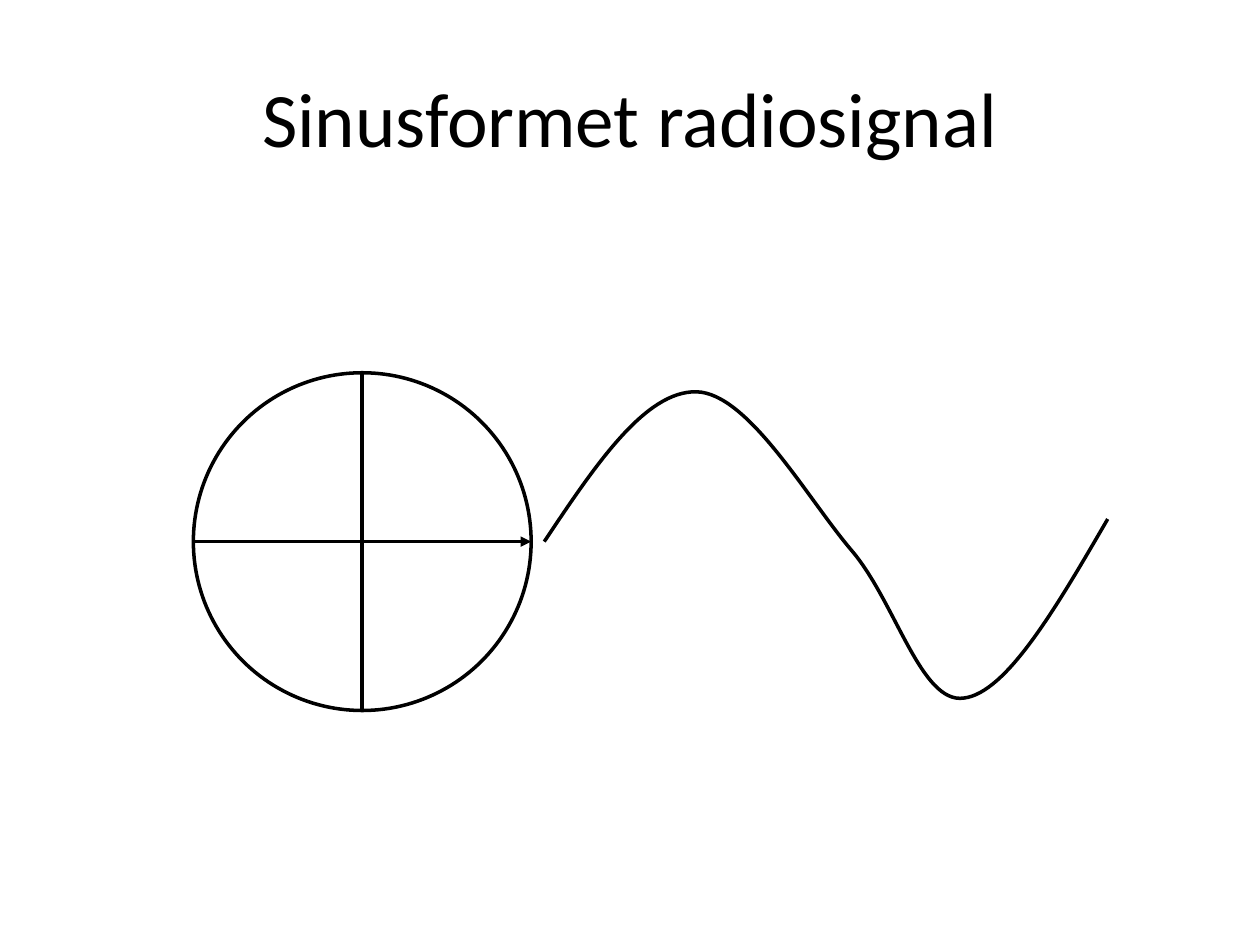
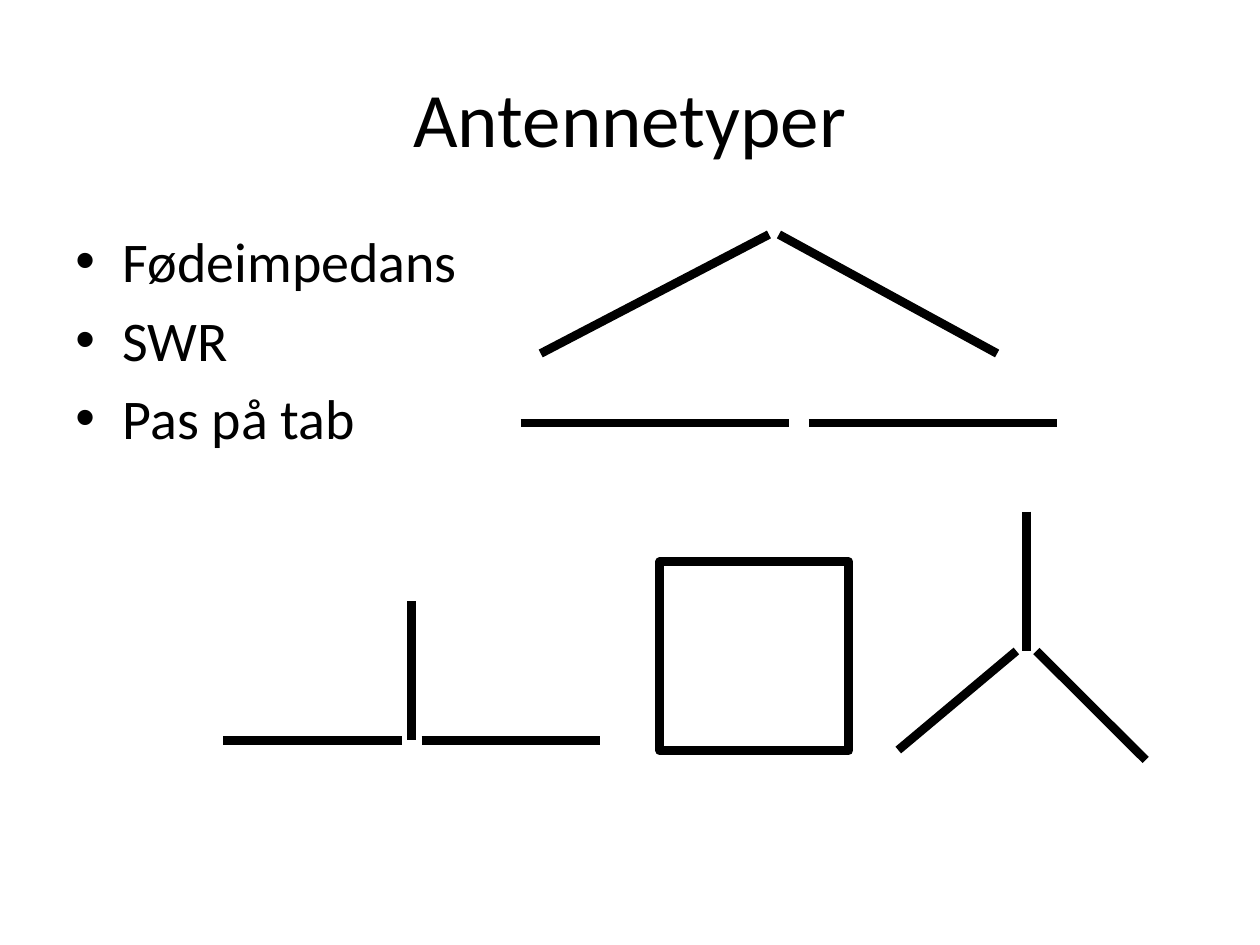
from lxml import etree
from pptx import Presentation
from pptx.dml.color import RGBColor
from pptx.enum import shapes, text
from pptx.oxml import ns
from pptx.util import Pt


def color(value):
    return RGBColor.from_string(value)


def add_xml(parent, tag, **attrs):
    return etree.SubElement(parent, ns.qn(tag), attrs)


class Deck:
    FONT = "Calibri"
    INK = "000000"
    TITLE_SIZE = 44
    BODY_SIZE = 32

    def __init__(self):
        self.prs = Presentation()
        self.prs.slide_width, self.prs.slide_height = Pt(720), Pt(540)
        self.s = None

    def slide(self, title):
        self.s = self.prs.slides.add_slide(self.prs.slide_layouts[6])
        tf = self.text_box(36, 21.6, 648, 90)
        tf.vertical_anchor = text.MSO_ANCHOR.MIDDLE
        p = tf.paragraphs[0]
        p.alignment = text.PP_ALIGN.CENTER
        self.run(p, title, self.TITLE_SIZE)

    def text_box(self, x, y, w, h):
        tf = self.s.shapes.add_textbox(Pt(x), Pt(y), Pt(w), Pt(h)).text_frame
        tf.word_wrap = True
        return tf

    def run(self, p, content, size):
        r = p.add_run()
        r.text = content
        r.font.name = self.FONT
        r.font.size = Pt(size)
        r.font.color.rgb = color(self.INK)

    def bullets(self, items, x, y, w, h):
        tf = self.text_box(x, y, w, h)
        for i, item in enumerate(items):
            p = tf.add_paragraph() if i else tf.paragraphs[0]
            p.space_before = Pt(self.BODY_SIZE * 0.2)
            pPr = p._p.get_or_add_pPr()
            pPr.set("marL", str(Pt(27)))
            pPr.set("indent", str(-Pt(27)))
            add_xml(pPr, "a:buFont", typeface="Arial")
            add_xml(pPr, "a:buChar", char="•")
            self.run(p, item, self.BODY_SIZE)

    def stroke(self, sp, width):
        sp.line.color.rgb = color(self.INK)
        sp.line.width = Pt(width)

    def outline(self, kind, x, y, w, h, width, parent=None):
        sp = (parent or self.s).shapes.add_shape(kind, Pt(x), Pt(y), Pt(w), Pt(h))
        sp.shadow.inherit = False
        sp.fill.background()
        self.stroke(sp, width)

    def line(self, start, end, width, parent=None, arrow=False):
        sp = (parent or self.s).shapes.add_connector(
            shapes.MSO_CONNECTOR.STRAIGHT, *map(Pt, start + end))
        self.stroke(sp, width)
        if arrow:
            add_xml(sp.line._get_or_add_ln(), "a:tailEnd", type="triangle")
        add_xml(sp._element.spPr, "a:effectLst")

    def curve(self, points, width):
        start, *rest = [(Pt(x), Pt(y)) for x, y in points]
        builder = self.s.shapes.build_freeform(*start)
        builder.add_line_segments(rest, close=False)
        sp = builder.convert_to_shape()
        sp.shadow.inherit = False
        sp.fill.background()
        self.stroke(sp, width)
        outline = next(sp._element.iter(ns.qn("a:path")))
        segments = outline.findall(ns.qn("a:lnTo"))
        for i in range(0, len(segments), 3):
            bezier = add_xml(outline, "a:cubicBezTo")
            for segment in segments[i:i + 3]:
                bezier.append(segment[0])
                outline.remove(segment)


def radio_signal(deck):
    deck.slide("Sinusformet radiosignal")
    cx, cy, radius, width = 207, 309.5, 96.5, 2
    phasor = deck.s.shapes.add_group_shape()
    deck.outline(shapes.MSO_SHAPE.OVAL, cx - radius, cy - radius,
                 2 * radius, 2 * radius, width, phasor)
    deck.line((cx - radius, cy), (cx + radius, cy), width, phasor, arrow=True)
    deck.line((cx, cy - radius), (cx, cy + radius), width, phasor)
    deck.curve([(311, 309.5),
                (339.8, 266.4), (368.6, 223.2), (398, 223.9),
                (427.7, 224.6), (461.5, 285.1), (486.7, 314.6),
                (511.9, 344.2), (526.3, 402.5), (550.8, 398.9),
                (575.3, 396), (604.1, 346.3), (633, 296.6)], width)


def antenna_types(deck):
    deck.slide("Antennetyper")
    deck.bullets(["Fødeimpedans", "SWR", "Pas på tab"], 36, 126, 648, 356.4)
    width, gap = 5, 5.7

    dipole_y = 241.7
    dipole = [((297.5, dipole_y), (450.7, dipole_y)),
              ((462.2, dipole_y), (604, dipole_y))]

    mast_x, mast_y, radial = 235.2, 423.1, 102
    ground_plane = [((mast_x, mast_y - 79.6), (mast_x, mast_y))]
    ground_plane += [((mast_x + side * gap, mast_y),
                      (mast_x + side * (gap + radial), mast_y))
                     for side in (-1, 1)]

    hub_x, hub_y = 586.5, 372
    sloping_radials = [((hub_x, hub_y - 79.6), (hub_x, hub_y)),
                       ((513.3, 428.6), (hub_x - gap, hub_y)),
                       ((hub_x + gap, hub_y), (654.7, 434.3))]

    top_y, foot_y = 134, 202
    inverted_v = [((309, foot_y), (439.4, top_y)),
                  ((445.1, top_y), (569.8, foot_y))]

    for start, end in dipole + ground_plane + sloping_radials:
        deck.line(start, end, width)
    deck.outline(shapes.MSO_SHAPE.RECTANGLE, 377, 321, 108, 108, width)
    for start, end in inverted_v:
        deck.line(start, end, width)


def main():
    deck = Deck()
    radio_signal(deck)
    antenna_types(deck)
    deck.prs.save("out.pptx")


if __name__ == "__main__":
    main()
